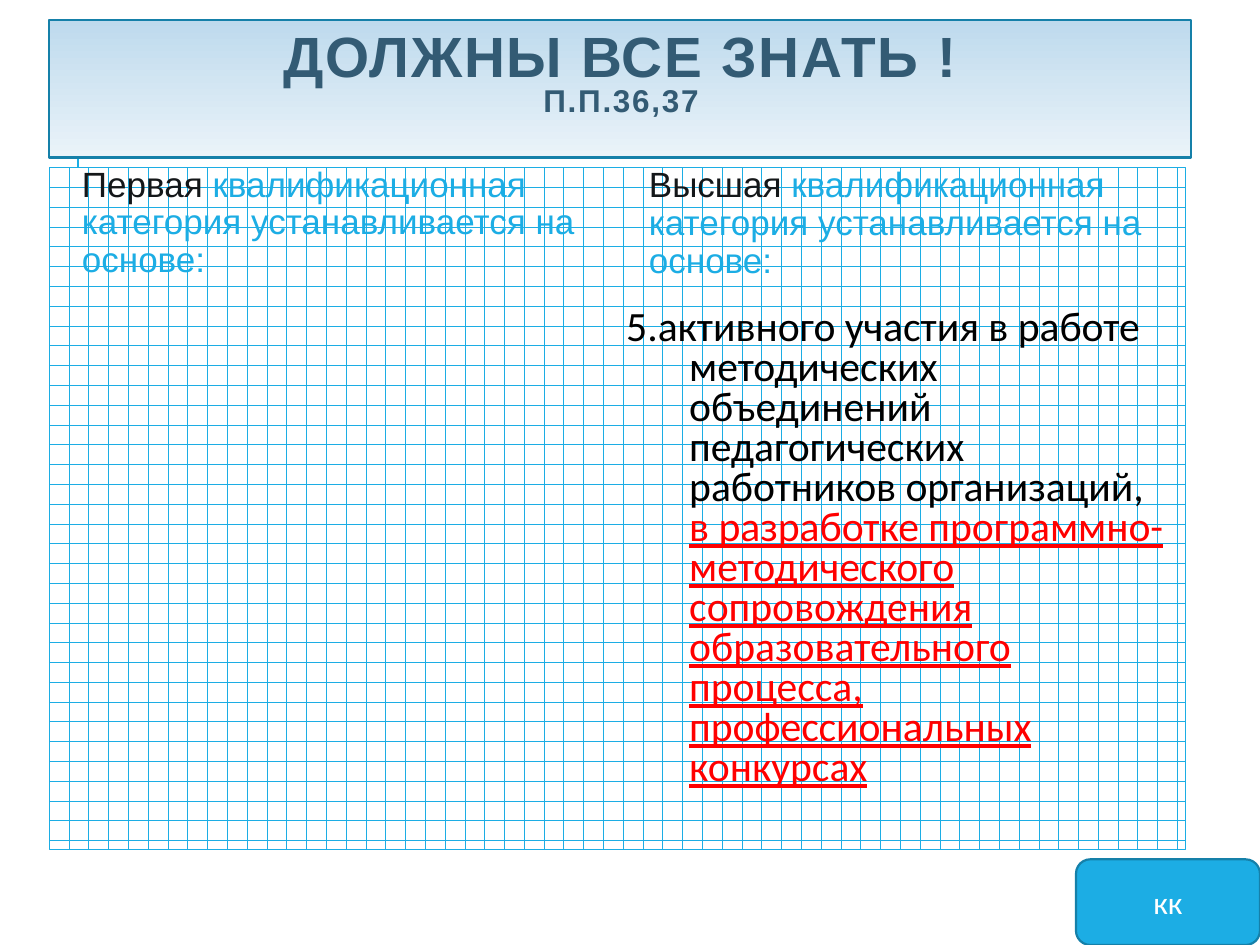
import pptx
import pptx.util
import pptx.dml.color
import pptx.enum.dml
import pptx.enum.shapes
import pptx.enum.text
import pptx.oxml

Inches = pptx.util.Inches
Pt = pptx.util.Pt
Shape = pptx.enum.shapes.MSO_SHAPE
Align = pptx.enum.text.PP_ALIGN
Anchor = pptx.enum.text.MSO_ANCHOR

BLUE, EDGE, NAVY = "1CADE4", "1580A9", "335B74"
DARK, BLACK, RED, WHITE = "141719", "000000", "FF0000", "FFFFFF"


def color(code):
    return pptx.dml.color.RGBColor.from_string(code)


def add_box(slide, kind, box, edge, width):
    shape = slide.shapes.add_shape(kind, *map(Inches, box))
    shape.shadow.inherit = False
    shape.line.color.rgb = color(edge)
    shape.line.width = Pt(width)
    return shape


def add_run(para, text, face, size, code, bold=False, under=False):
    run = para.add_run()
    run.text = text
    font = run.font
    font.name, font.size, font.bold = face, Pt(size), bold
    font.underline = under
    font.color.rgb = color(code)
    return run


def place(slide, index, box, anchor, insets):
    """Move a placeholder into the box, in front of the shapes drawn so far."""
    holder = slide.placeholders[index]
    holder.left, holder.top, holder.width, holder.height = map(Inches, box)
    slide.shapes._spTree.append(holder._element)
    frame = holder.text_frame
    frame.word_wrap = True
    frame.auto_size = pptx.enum.text.MSO_AUTO_SIZE.NONE
    frame.vertical_anchor = anchor
    side, edge = map(Inches, insets)
    frame.margin_left = frame.margin_right = side
    frame.margin_top = frame.margin_bottom = edge
    return frame.paragraphs[0]


def add_rule(slide, x, top, end):
    rule = slide.shapes.add_connector(
        pptx.enum.shapes.MSO_CONNECTOR.STRAIGHT,
        Inches(x), Inches(end), Inches(x), Inches(top))
    rule.line.color.rgb = color(BLUE)
    rule.line.width = Pt(1.5)
    rule._element.spPr.append(pptx.oxml.parse_xml(
        '<a:effectLst xmlns:a='
        '"http://schemas.openxmlformats.org/drawingml/2006/main"/>'))


def add_banner(slide, box):
    fill = add_box(slide, Shape.RECTANGLE, box, EDGE, 1.25).fill
    fill.gradient()
    fill.gradient_angle = 270
    for stop, code in zip(fill.gradient_stops, ("BEDAED", "EAF3F9")):
        stop.color.rgb = color(code)

    left, top = box[:2]
    para = place(slide, 0, (left + 0.04, top, 9, 0.94), Anchor.TOP, (0.1, 0.11))
    para.alignment = Align.CENTER
    para.line_spacing = 0.8
    head = add_run(para, "ДОЛЖНЫ ВСЕ ЗНАТЬ !", "Arial", 32.4, NAVY, bold=True)
    para.add_line_break()
    points = add_run(para, "П.П.36,37", "Arial", 18, NAVY, bold=True)
    for run in (head, points):
        run.font._element.set("spc", "100")


def add_grid(slide, box):
    fill = add_box(slide, Shape.RECTANGLE, box, BLUE, 0.75).fill
    fill.patterned()
    fill.pattern = pptx.enum.dml.MSO_PATTERN.DOTTED_GRID
    fill.fore_color.rgb = color(BLUE)
    fill.back_color.rgb = color(WHITE)


def add_heading(slide, index, box, level):
    para = place(slide, index, box, Anchor.MIDDLE, (0.15, 0.05))
    para.line_spacing = 0.9
    para.space_before = Pt(0)
    add_run(para, level, "Arial", 20, DARK)
    add_run(para, " квалификационная категория устанавливается на основе:",
            "Arial", 20, BLUE)


def add_basis(slide, box):
    para = place(slide, 4, box, Anchor.TOP, (0.05, 0.05))
    para.line_spacing = 0.8
    para.space_before, para.space_after = Pt(12), Pt(2)
    props = para._p.get_or_add_pPr()
    props.set("marL", str(Inches(0.5)))
    props.set("indent", str(Inches(-0.5)))
    props.append(pptx.oxml.parse_xml(
        '<a:buNone xmlns:a='
        '"http://schemas.openxmlformats.org/drawingml/2006/main"/>'))
    add_run(para, "5.активного участия в работе методических объединений "
            "педагогических работников организаций, ", "Calibri", 23.8, BLACK)
    add_run(para, "в разработке программно-методического сопровождения "
            "образовательного процесса, профессиональных конкурсах",
            "Calibri", 23.8, RED, under=True)


def add_button(slide, box):
    shape = add_box(slide, Shape.ROUNDED_RECTANGLE, box, EDGE, 1.25)
    shape.fill.solid()
    shape.fill.fore_color.rgb = color(BLUE)
    frame = shape.text_frame
    frame.vertical_anchor = Anchor.MIDDLE
    para = frame.paragraphs[0]
    para.alignment = Align.CENTER
    add_run(para, "кк", "Calibri", 18, WHITE)


def main():
    deck = pptx.Presentation()
    deck.slide_width, deck.slide_height = Inches(10), Inches(7.5)
    slide = deck.slides.add_slide(deck.slide_layouts[4])
    spare = slide.placeholders[2]._element
    spare.getparent().remove(spare)

    add_rule(slide, 0.62, 0.9, 1.9)
    add_banner(slide, (0.39, 0.16, 9.06, 1.09))
    add_grid(slide, (0.39, 1.33, 9.02, 5.41))
    add_heading(slide, 1, (0.5, 1.17, 4.42, 1.21), "Первая")
    add_heading(slide, 3, (5, 1.23, 4.42, 1.1), "Высшая")
    add_basis(slide, (4.92, 2.41, 4.42, 4.31))
    add_button(slide, (8.54, 6.82, 1.46, 0.68))
    deck.save("out.pptx")


if __name__ == "__main__":
    main()
